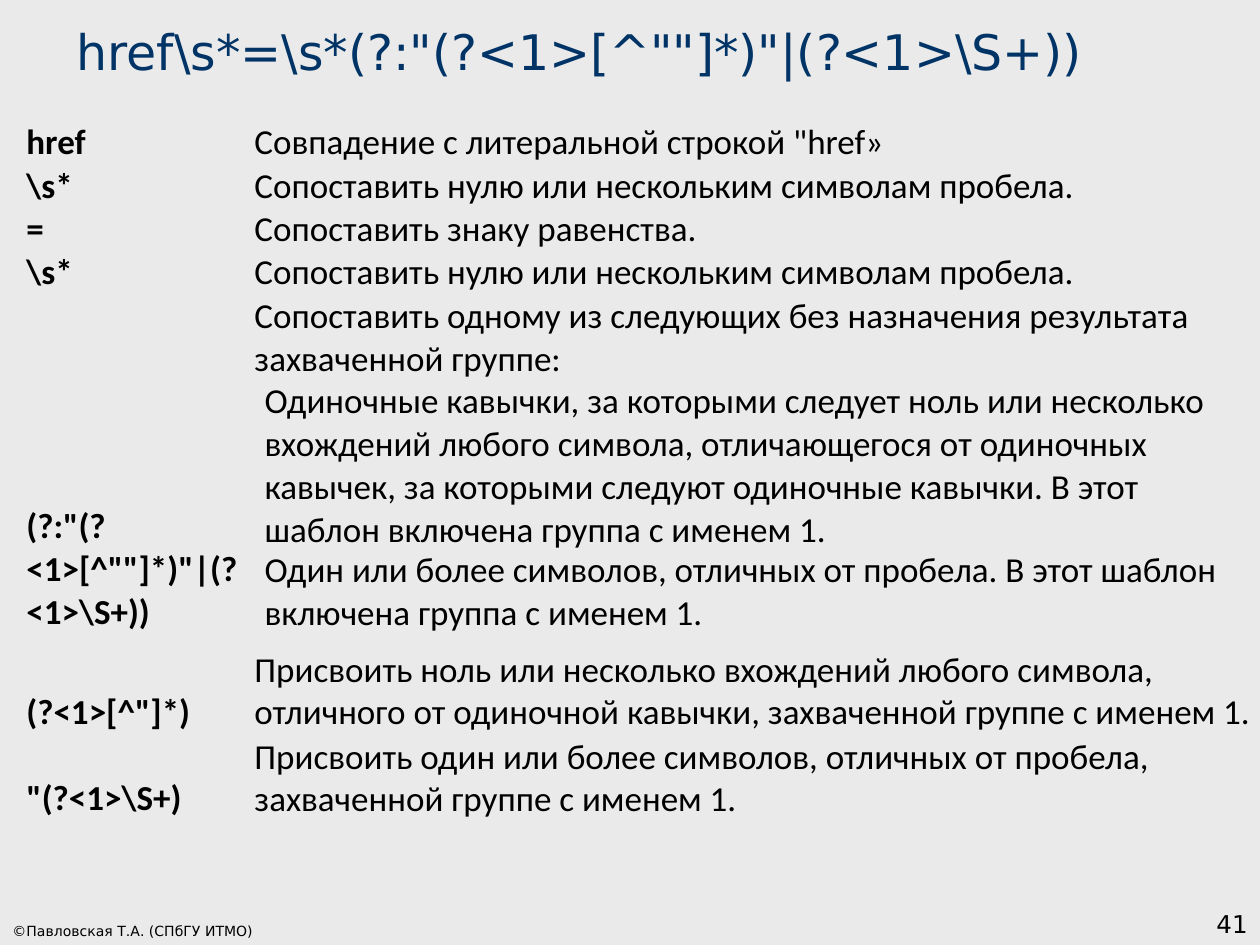
from dataclasses import dataclass

from pptx import Presentation
from pptx.dml.color import RGBColor
from pptx.enum.text import MSO_ANCHOR as Anchor, MSO_AUTO_SIZE as AutoSize, PP_ALIGN as Align
from pptx.oxml.ns import qn
from pptx.slide import Slide
from pptx.table import Table, _Cell as Cell
from pptx.text.text import TextFrame
from pptx.util import Inches, Pt

WIDTH, HEIGHT = Inches(10), Inches(7.5)
TITLE_ONLY = 5
NO_STYLE = "{2D5ABB26-0587-4C30-8999-92F81FD0307C}"


@dataclass(frozen=True)
class Style:
    font: str
    size: float
    color: str
    bold: bool = False


@dataclass(frozen=True)
class Theme:
    background: str = "EAEAEA"
    title: Style = Style("DejaVu Sans", 28, "003366")
    term: Style = Style("Calibri", 20, "000000", True)
    meaning: Style = Style("Calibri", 20, "000000")
    credit: Style = Style("DejaVu Sans", 8, "000000")
    number: Style = Style("DejaVu Sans", 14, "000000")


@dataclass(frozen=True)
class Area:
    left: float
    top: float
    width: float
    height: float

    def lengths(self) -> tuple[int, int, int, int]:
        return (round(self.left * WIDTH), round(self.top * HEIGHT),
                round(self.width * WIDTH), round(self.height * HEIGHT))


@dataclass(frozen=True)
class Entry:
    term: str
    meaning: str
    height: float
    indent: float = 0.01


@dataclass(frozen=True)
class Footer:
    text: str
    area: Area
    style: Style
    align: Align


THEME = Theme()
TITLE_AREA = Area(0.051, 0.016, 0.937, 0.076)
TABLE_AREA = Area(0.02, 0.1013, 0.98, 0.7667)
COLUMN_SHARES = (0.181, 0.799)
GROUP_ROWS = (4, 6)
ENTRIES = (
    Entry("href", 'Совпадение с литеральной строкой "href»', 0.54),
    Entry(r"\s*", "Сопоставить нулю или нескольким символам пробела.", 0.3),
    Entry("=", "Сопоставить знаку равенства.", 0.3),
    Entry(r"\s*", "Сопоставить нулю или нескольким символам пробела.", 0.3),
    Entry(r'(?:"(?<1>[^""]*)"|(?<1>\S+))',
          "Сопоставить одному из следующих без назначения результата захваченной группе:", 0.54),
    Entry("", "Одиночные кавычки, за которыми следует ноль или несколько вхождений любого "
          "символа, отличающегося от одиночных кавычек, за которыми следуют одиночные "
          "кавычки. В этот шаблон включена группа с именем 1.", 1.06, 0.09),
    Entry("", "Один или более символов, отличных от пробела. "
          "В этот шаблон включена группа с именем 1.", 0.6, 0.09),
    Entry('(?<1>[^"]*)', "Присвоить ноль или несколько вхождений любого символа, отличного "
          "от одиночной кавычки, захваченной группе с именем 1.", 0.8),
    Entry(r'"(?<1>\S+)', "Присвоить один или более символов, отличных от пробела, "
          "захваченной группе с именем 1.", 0.6),
)
FOOTERS = (
    Footer("©Павловская Т.А. (СПбГУ ИТМО)", Area(0, 0.963, 0.311, 0.037),
           THEME.credit, Align.LEFT),
    Footer("41", Area(0.792, 0.933, 0.208, 0.067), THEME.number, Align.RIGHT),
)


def write(frame: TextFrame, text: str, style: Style, align: Align = Align.LEFT) -> None:
    frame.text = text
    paragraph = frame.paragraphs[0]
    paragraph.alignment = align
    font = paragraph.font
    font.name, font.size, font.bold = style.font, Pt(style.size), style.bold
    font.color.rgb = RGBColor.from_string(style.color)


def add_title(page: Slide, text: str) -> None:
    title = page.shapes.title
    title.left, title.top, title.width, title.height = TITLE_AREA.lengths()
    frame = title.text_frame
    frame.word_wrap = True
    frame.auto_size = AutoSize.SHAPE_TO_FIT_TEXT
    frame.vertical_anchor = Anchor.BOTTOM
    write(frame, text, THEME.title)


def fill_cell(cell: Cell, text: str, style: Style, indent: float) -> None:
    cell.fill.background()
    cell.vertical_anchor = Anchor.BOTTOM
    cell.margin_left = Inches(indent)
    cell.margin_top = cell.margin_right = Inches(0.01)
    cell.margin_bottom = 0
    write(cell.text_frame, text, style)


def add_glossary(page: Slide) -> Table:
    shape = page.shapes.add_table(len(ENTRIES), len(COLUMN_SHARES), *TABLE_AREA.lengths())
    table = shape.table
    table.first_row = table.horz_banding = False
    shape.element.find(".//" + qn("a:tableStyleId")).text = NO_STYLE
    for column, share in zip(table.columns, COLUMN_SHARES):
        column.width = round(share * WIDTH)
    for index, entry in enumerate(ENTRIES):
        table.rows[index].height = Inches(entry.height)
        fill_cell(table.cell(index, 0), entry.term, THEME.term, 0.01)
        fill_cell(table.cell(index, 1), entry.meaning, THEME.meaning, entry.indent)
    first, last = GROUP_ROWS
    table.cell(first, 0).merge(table.cell(last, 0))
    return table


def add_footer(page: Slide, footer: Footer) -> None:
    box = page.shapes.add_textbox(*footer.area.lengths())
    frame = box.text_frame
    frame.word_wrap = True
    frame.vertical_anchor = Anchor.BOTTOM
    write(frame, footer.text, footer.style, footer.align)


def main() -> None:
    deck = Presentation()
    deck.slide_width, deck.slide_height = WIDTH, HEIGHT
    page = deck.slides.add_slide(deck.slide_layouts[TITLE_ONLY])
    page.background.fill.solid()
    page.background.fill.fore_color.rgb = RGBColor.from_string(THEME.background)
    add_title(page, r'href\s*=\s*(?:"(?<1>[^""]*)"|(?<1>\S+))')
    add_glossary(page)
    for footer in FOOTERS:
        add_footer(page, footer)
    deck.save("out.pptx")


if __name__ == "__main__":
    main()
